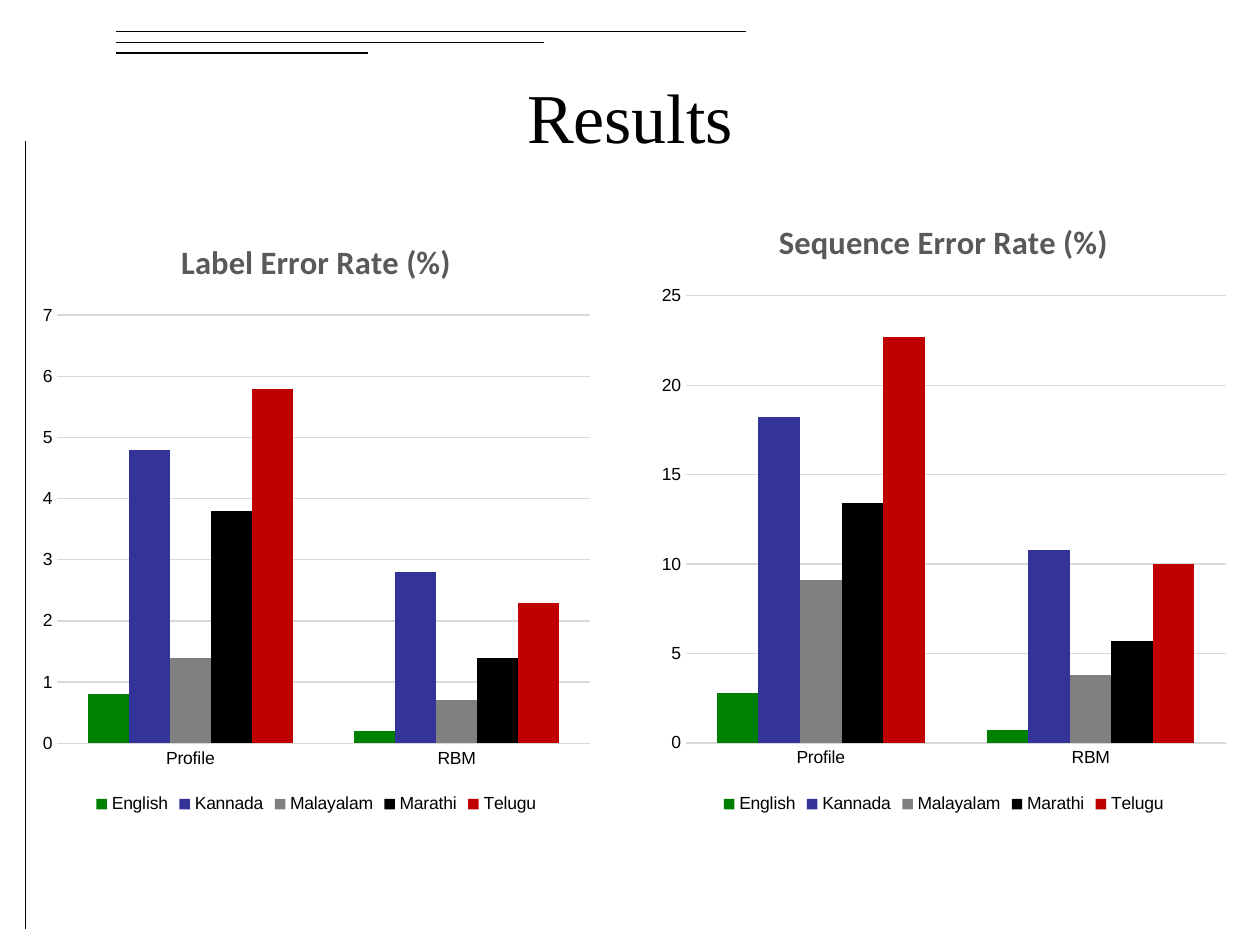
from lxml.etree import SubElement
from pptx import Presentation
from pptx.chart.data import CategoryChartData
from pptx.dml.color import RGBColor
from pptx.enum.chart import XL_CHART_TYPE as ChartType, XL_LEGEND_POSITION as LegendPos, XL_TICK_MARK as TickMark
from pptx.enum.shapes import MSO_CONNECTOR as Connector
from pptx.enum.text import MSO_ANCHOR as Anchor, PP_ALIGN as Align
from pptx.oxml.ns import qn
from pptx.util import Inches, Pt

WIDTH, HEIGHT = 10, 7.5
RULE_LEFT, RULE_TOP, RULE_STEP = 0.92, 0.25, 0.085
RULE_LENGTHS = (5, 3.4, 2)
METHODS = ("Profile", "RBM")
LANGUAGE_COLOURS = {
    "English": "008000",
    "Kannada": "333399",
    "Malayalam": "808080",
    "Marathi": "000000",
    "Telugu": "C00000",
}
LABEL_ERRORS = ((0.8, 0.2), (4.8, 2.8), (1.4, 0.7), (3.8, 1.4), (5.8, 2.3))
SEQUENCE_ERRORS = ((2.8, 0.7), (18.2, 10.8), (9.1, 3.8), (13.4, 5.7), (22.7, 10))
LABEL_TEXT = {"name": "Arial", "size": Pt(10), "bold": False}
CHART_TITLE = {"name": "Calibri", "size": Pt(18.6), "bold": True}
HEADING = {"name": "Times New Roman", "size": Pt(40), "bold": False}


def colour(hex_code):
    return RGBColor.from_string(hex_code)


def style_font(font, values, hex_code="000000"):
    for attribute, value in values.items():
        setattr(font, attribute, value)
    font.color.rgb = colour(hex_code)


def add_rule(slide, x1, y1, x2, y2):
    rule = slide.shapes.add_connector(Connector.STRAIGHT, *map(Inches, (x1, y1, x2, y2)))
    rule.line.width = Pt(0.75)
    rule.line.color.rgb = colour("000000")
    SubElement(rule._element.spPr, qn("a:effectLst"))


def add_heading(slide, text):
    box = slide.shapes.add_textbox(*map(Inches, (0.75, 0.42, WIDTH - 1.5, 1)))
    frame = box.text_frame
    frame.word_wrap = True
    frame.vertical_anchor = Anchor.MIDDLE
    paragraph = frame.paragraphs[0]
    paragraph.text = text
    paragraph.alignment = Align.CENTER
    style_font(paragraph.runs[0].font, HEADING)


def style_axes(chart, top, step):
    for axis in (chart.category_axis, chart.value_axis):
        axis.major_tick_mark = axis.minor_tick_mark = TickMark.NONE
        axis.format.line.fill.background()
        style_font(axis.tick_labels.font, LABEL_TEXT)
    scale = {"minimum_scale": 0, "maximum_scale": top, "major_unit": step}
    for attribute, value in scale.items():
        setattr(chart.value_axis, attribute, value)
    grid = chart.value_axis.major_gridlines.format.line
    grid.width = Pt(0.75)
    grid.color.rgb = colour("D9D9D9")


def add_error_chart(slide, title, errors, area, top, step):
    """Clustered columns by method, one series for each language."""
    rates = CategoryChartData(number_format="General")
    rates.categories = METHODS
    for language, values in zip(LANGUAGE_COLOURS, errors):
        rates.add_series(language, values)
    chart = slide.shapes.add_chart(ChartType.COLUMN_CLUSTERED, *map(Inches, area), rates).chart
    style_font(chart.font, LABEL_TEXT)

    chart.has_title = True
    chart.chart_title.include_in_layout = False
    heading = chart.chart_title.text_frame
    heading.text = title
    style_font(heading.paragraphs[0].runs[0].font, CHART_TITLE, "595959")

    chart.has_legend = True
    chart.legend.position = LegendPos.BOTTOM
    chart.legend.include_in_layout = False
    style_font(chart.legend.font, LABEL_TEXT)

    style_axes(chart, top, step)
    plot = chart.plots[0]
    plot.gap_width, plot.overlap, plot.vary_by_categories = 150, 0, False
    for series in plot.series:
        series.format.fill.solid()
        series.format.fill.fore_color.rgb = colour(LANGUAGE_COLOURS[series.name])
        series.invert_if_negative = False


def main():
    deck = Presentation()
    deck.slide_width, deck.slide_height = Inches(WIDTH), Inches(HEIGHT)
    slide = deck.slides.add_slide(deck.slide_layouts[6])

    add_rule(slide, 0.2, 1.12, 0.2, 7.37)
    for row, length in enumerate(RULE_LENGTHS):
        y = RULE_TOP + row * RULE_STEP
        add_rule(slide, RULE_LEFT, y, RULE_LEFT + length, y)
    add_heading(slide, "Results")

    add_error_chart(slide, "Label Error Rate (%)", LABEL_ERRORS, (0.25, 1.7, 4.52, 4.8), 7, 1)
    add_error_chart(slide, "Sequence Error Rate (%)", SEQUENCE_ERRORS, (5.16, 1.54, 4.66, 4.96), 25, 5)
    deck.save("out.pptx")


if __name__ == "__main__":
    main()
